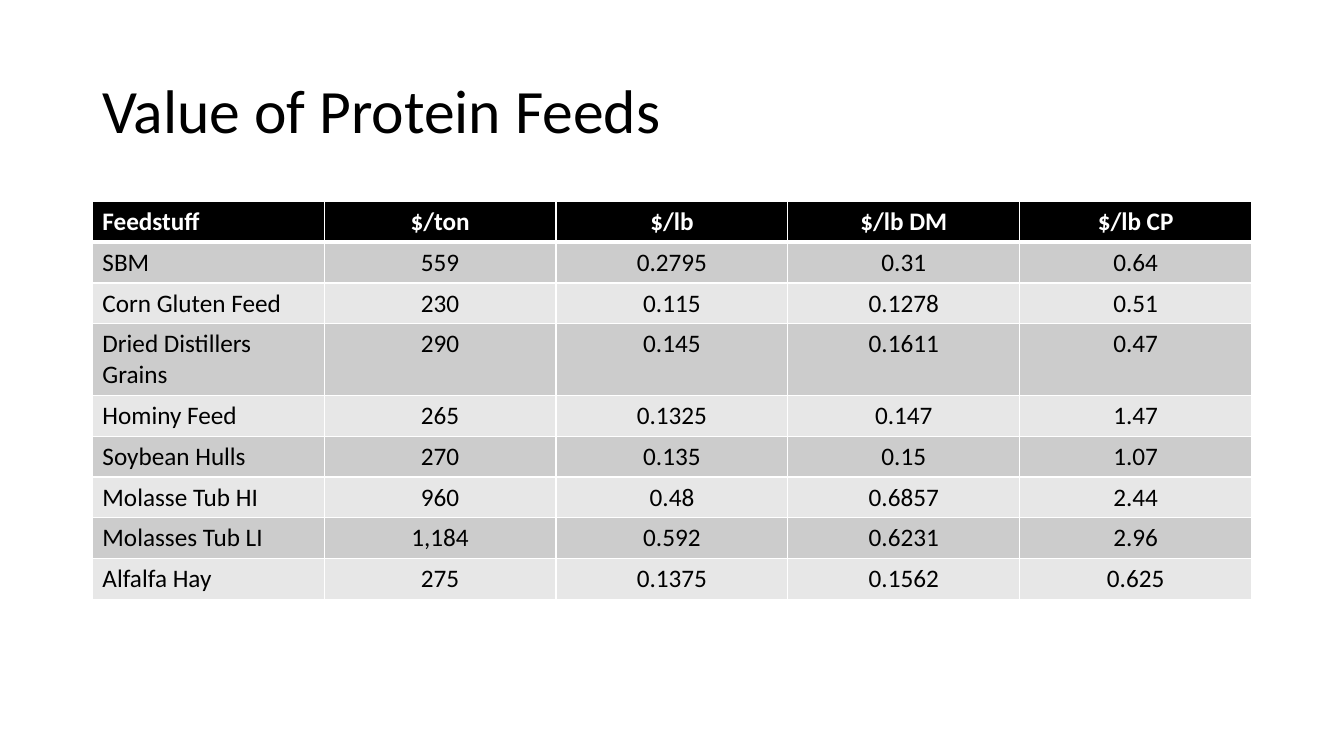
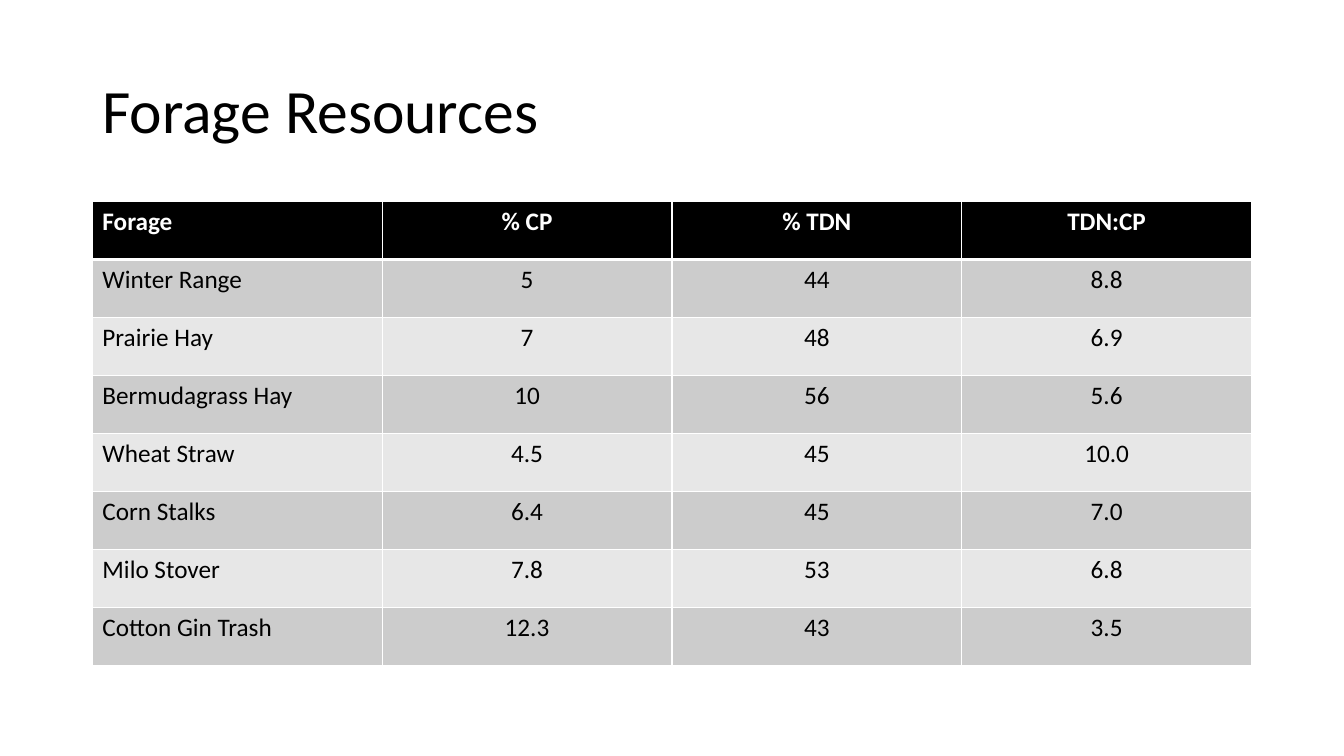
"""Build two slides that compare protein feeds and forage resources in tables."""
from dataclasses import dataclass

from lxml.etree import SubElement
from pptx import Presentation
from pptx.dml.color import RGBColor
from pptx.enum.text import MSO_ANCHOR, PP_ALIGN
from pptx.oxml.ns import qn
from pptx.util import Emu, Pt

EMU_PER_PX = 3810
SLIDE_WIDTH, SLIDE_HEIGHT = 3200, 1800
LEFT, CONTENT_WIDTH = 220, 2760
TITLE_TOP, TITLE_HEIGHT = 96, 348
TABLE_TOP = 480

FONT = "Calibri"
BLACK = RGBColor(0x00, 0x00, 0x00)
WHITE = RGBColor(0xFF, 0xFF, 0xFF)
BANDS = (RGBColor(0xE7, 0xE7, 0xE7), RGBColor(0xCC, 0xCC, 0xCC))
THIN, THICK = 1, 3


@dataclass(frozen=True)
class TableSlide:
    title: str
    rows: tuple[tuple[str, ...], ...]
    row_heights: tuple[int, ...]


TABLE_SLIDES = (
    TableSlide(
        "Value of Protein Feeds",
        (
            ("Feedstuff", "$/ton", "$/lb", "$/lb DM", "$/lb CP"),
            ("SBM", "559", "0.2795", "0.31", "0.64"),
            ("Corn Gluten Feed", "230", "0.115", "0.1278", "0.51"),
            ("Dried Distillers Grains", "290", "0.145", "0.1611", "0.47"),
            ("Hominy Feed", "265", "0.1325", "0.147", "1.47"),
            ("Soybean Hulls", "270", "0.135", "0.15", "1.07"),
            ("Molasse Tub HI", "960", "0.48", "0.6857", "2.44"),
            ("Molasses Tub LI", "1,184", "0.592", "0.6231", "2.96"),
            ("Alfalfa Hay", "275", "0.1375", "0.1562", "0.625"),
        ),
        (97,) * 3 + (171,) + (97,) * 5,
    ),
    TableSlide(
        "Forage Resources",
        (
            ("Forage", "% CP", "% TDN", "TDN:CP"),
            ("Winter Range", "5", "44", "8.8"),
            ("Prairie Hay", "7", "48", "6.9"),
            ("Bermudagrass Hay", "10", "56", "5.6"),
            ("Wheat Straw", "4.5", "45", "10.0"),
            ("Corn Stalks", "6.4", "45", "7.0"),
            ("Milo Stover", "7.8", "53", "6.8"),
            ("Cotton Gin Trash", "12.3", "43", "3.5"),
        ),
        (138,) * 8,
    ),
)


def px(length: int) -> Emu:
    """Turn whole pixels into EMU."""
    return Emu(length * EMU_PER_PX)


def write_text(frame, text: str, *, size: int, color: RGBColor = BLACK,
               bold: bool = False, align: PP_ALIGN = PP_ALIGN.LEFT,
               line_spacing: float = 1.0) -> None:
    """Write one formatted paragraph into a text frame."""
    paragraph = frame.paragraphs[0]
    paragraph.alignment = align
    paragraph.line_spacing = line_spacing
    run = paragraph.add_run()
    run.text = text
    run.font.name = FONT
    run.font.size = Pt(size)
    run.font.bold = bold
    run.font.color.rgb = color


def add_title(slide, text: str) -> None:
    """Add the slide title."""
    box = slide.shapes.add_textbox(px(LEFT), px(TITLE_TOP), px(CONTENT_WIDTH), px(TITLE_HEIGHT))
    frame = box.text_frame
    frame.word_wrap = True
    frame.vertical_anchor = MSO_ANCHOR.MIDDLE
    write_text(frame, text, size=44, line_spacing=0.9)


def set_borders(cell, *, top: int, bottom: int) -> None:
    """Draw white borders around a cell, with widths in points."""
    properties = cell._tc.get_or_add_tcPr()
    for side, width in (("L", THIN), ("R", THIN), ("T", top), ("B", bottom)):
        line = SubElement(properties, qn(f"a:ln{side}"), w=str(Pt(width)))
        fill = SubElement(line, qn("a:solidFill"))
        SubElement(fill, qn("a:srgbClr"), val=str(WHITE))


def style_cell(cell, text: str, row: int, column: int) -> None:
    """Fill, border and label one cell by its place in the table."""
    header = row == 0
    set_borders(cell, top=THICK if row == 1 else THIN, bottom=THICK if header else THIN)
    cell.fill.solid()
    cell.fill.fore_color.rgb = BLACK if header else BANDS[row % 2]
    write_text(cell.text_frame, text, size=18, bold=header,
               color=WHITE if header else BLACK,
               align=PP_ALIGN.CENTER if column else PP_ALIGN.LEFT)


def add_data_table(slide, content: TableSlide) -> None:
    """Add the table with equal columns and a banded body."""
    column_count = len(content.rows[0])
    table = slide.shapes.add_table(
        len(content.rows), column_count, px(LEFT), px(TABLE_TOP),
        px(CONTENT_WIDTH), px(sum(content.row_heights))).table
    for column in table.columns:
        column.width = px(CONTENT_WIDTH // column_count)
    for row, height in zip(table.rows, content.row_heights):
        row.height = px(height)
    for row, values in enumerate(content.rows):
        for column, text in enumerate(values):
            style_cell(table.cell(row, column), text, row, column)


def main() -> None:
    """Build and save the presentation."""
    presentation = Presentation()
    presentation.slide_width = px(SLIDE_WIDTH)
    presentation.slide_height = px(SLIDE_HEIGHT)
    blank_layout = presentation.slide_layouts[6]
    for content in TABLE_SLIDES:
        slide = presentation.slides.add_slide(blank_layout)
        add_title(slide, content.title)
        add_data_table(slide, content)
    presentation.save("out.pptx")


if __name__ == "__main__":
    main()
